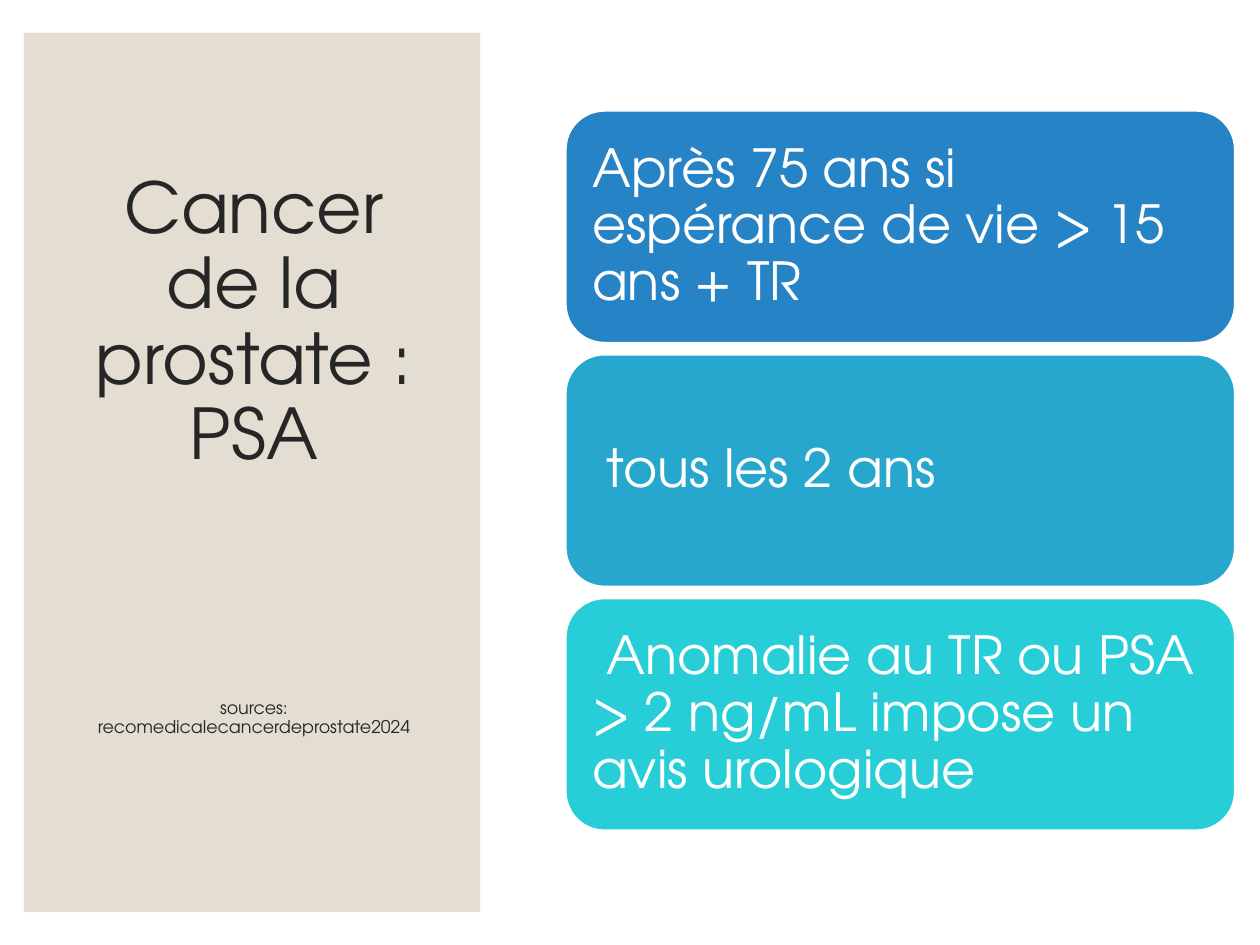
import pptx
import pptx.util
import pptx.dml.color
import pptx.enum.shapes
import pptx.enum.text

Inches, Pt = pptx.util.Inches, pptx.util.Pt
Shape = pptx.enum.shapes.MSO_SHAPE
Align = pptx.enum.text.PP_ALIGN
Anchor = pptx.enum.text.MSO_ANCHOR

FONT = "TeX Gyre Adventor"
HUES = {
    "white": "FFFFFF",
    "sand": "E3DED1",
    "ink": "262626",
    "blue": "2683C6",
    "sky": "27A7CE",
    "aqua": "27CED7",
}
CARDS = [
    ("Après 75 ans si espérance de vie > 15 ans + TR", "blue"),
    (" tous les 2 ans", "sky"),
    (" Anomalie au TR ou PSA > 2 ng/mL impose un avis urologique", "aqua"),
]


def tint(name):
    """Return the named colour."""
    return pptx.dml.color.RGBColor.from_string(HUES[name])


def apply(item, form):
    """Set each attribute of item from a dict of format values."""
    for name, value in form.items():
        setattr(item, name, value)


def block(slide, kind, box, hue, edge=None):
    """Add a filled shape, outlined if an edge colour is given."""
    shape = slide.shapes.add_shape(kind, *map(Inches, box))
    shape.shadow.inherit = False
    shape.fill.solid()
    shape.fill.fore_color.rgb = tint(hue)
    if edge:
        shape.line.color.rgb = tint(edge)
        shape.line.width = Pt(1)
    else:
        shape.line.fill.background()
    return shape


def write(para, text, size, hue, align, before=0):
    """Write one run of text into a paragraph and format it."""
    apply(para, {"alignment": align, "line_spacing": 0.9, "space_before": Pt(before)})
    run = para.add_run()
    run.text = text
    apply(run.font, {"name": FONT, "size": Pt(size), "bold": False})
    run.font.color.rgb = tint(hue)


def head(slide):
    """Place the title and its source line over the side panel."""
    title = slide.shapes.title
    slide.shapes.element.append(title.element)
    apply(title, {"left": Inches(0.47), "top": Inches(0.61),
                  "width": Inches(3.09), "height": Inches(6.24)})
    frame = title.text_frame
    apply(frame, {"word_wrap": True, "vertical_anchor": Anchor.TOP,
                  "auto_size": pptx.enum.text.MSO_AUTO_SIZE.NONE,
                  "margin_top": Inches(0.76)})
    write(frame.paragraphs[0], "Cancer de la prostate : PSA", 40, "ink", Align.CENTER)
    write(frame.add_paragraph(), "sources: recomedicalecancerdeprostate2024",
          10, "ink", Align.CENTER, 128)


def card(slide, top, text, hue):
    """Add one rounded card with its text."""
    shape = block(slide, Shape.ROUNDED_RECTANGLE, (4.49, top, 5.31, 1.84), hue, "white")
    frame = shape.text_frame
    apply(frame, {"word_wrap": True, "vertical_anchor": Anchor.MIDDLE})
    apply(frame, {f"margin_{side}": Inches(0.12)
                  for side in ("left", "top", "right", "bottom")})
    write(frame.paragraphs[0], text, 30, "white", Align.LEFT)


def main():
    """Build the slide and save it."""
    deck = pptx.Presentation()
    apply(deck, {"slide_width": Inches(10), "slide_height": Inches(7.5)})
    slide = deck.slides.add_slide(deck.slide_layouts[5])
    block(slide, Shape.RECTANGLE, (0, 0, 10, 7.5), "white")
    block(slide, Shape.RECTANGLE, (0.19, 0.26, 3.62, 6.98), "sand")
    head(slide)
    for row, (text, hue) in enumerate(CARDS):
        card(slide, 0.88 + row * 1.935, text, hue)
    deck.save("out.pptx")


if __name__ == "__main__":
    main()
